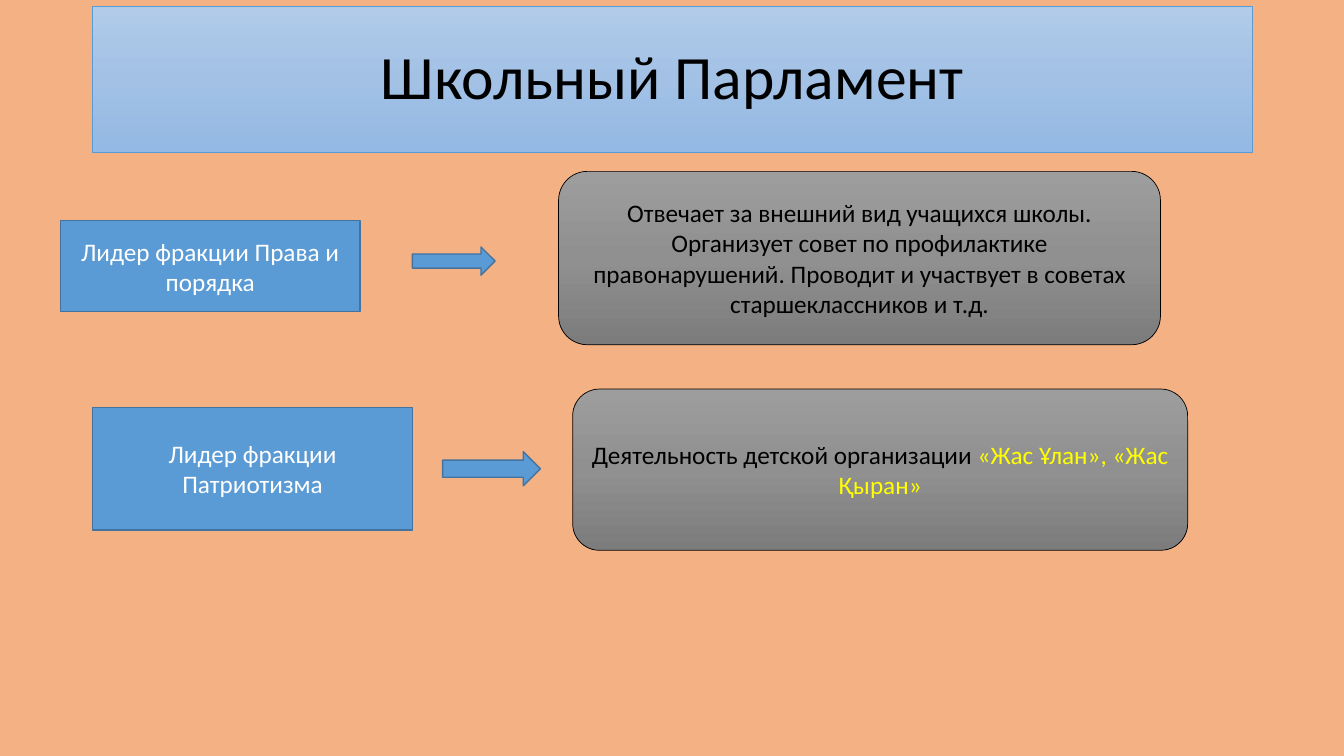
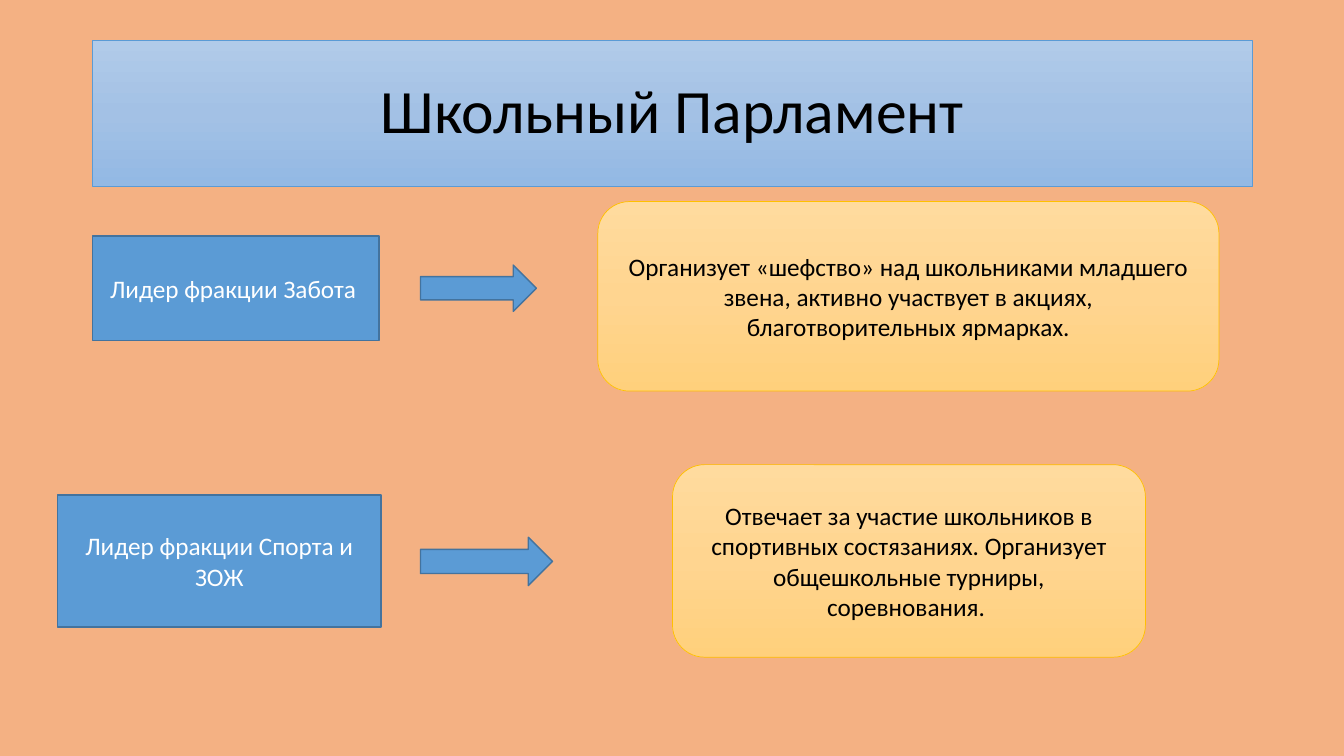
from copy import deepcopy
from pptx import Presentation
from pptx import util as u
from pptx.dml.color import RGBColor
from pptx.enum import shapes, text

HUES = {
    "page": "F4B183", "blue": "5B9BD5", "edge": "43739E",
    "black": "000000", "white": "FFFFFF", "yellow": "FFFF00", "gold": "FFC000",
}
FADES = {
    "sky": ("B1CBE9", "A3C1E5", "93B9E4"),
    "gray": ("9D9D9D", "909090", "7C7C7C"),
    "sand": ("FFDB9E", "FFD590", "FFD07C"),
}
FONT = "Calibri"
TITLE = "Школьный Парламент"
KIND = shapes.MSO_SHAPE

SLIDES = [
    {"top": 0.06, "fade": "gray", "edge": "black", "rows": [
        {"lead": ("Лидер фракции Права и порядка", (0.6, 2.19, 2.97, 0.9)),
         "arrow": (4.09, 2.45, 0.82, 0.28),
         "duty": ([("Отвечает за внешний вид учащихся школы. Организует совет по "
                    "профилактике правонарушений. Проводит и участвует в советах "
                    "старшеклассников и т.д.", "black")], (5.54, 1.7, 5.97, 1.72))},
        {"lead": ("Лидер фракции Патриотизма", (0.92, 4.04, 3.17, 1.22)),
         "arrow": (4.39, 4.48, 0.97, 0.34),
         "duty": ([("Деятельность детской организации ", "black"),
                   ("«Жас Ұлан», «Жас Қыран»", "yellow")], (5.68, 3.86, 6.1, 1.6))},
    ]},
    {"top": 0.4, "fade": "sand", "edge": "gold", "rows": [
        {"lead": ("Лидер фракции Забота ", (0.92, 2.34, 2.84, 1.04)),
         "arrow": (4.17, 2.63, 1.15, 0.46),
         "duty": ([("Организует «шефство» над школьниками младшего звена, активно "
                    "участвует в акциях, благотворительных ярмарках.", "black")],
                  (5.93, 2, 6.16, 1.88))},
        {"lead": ("Лидер фракции Спорта и ЗОЖ", (0.57, 4.91, 3.21, 1.31)),
         "arrow": (4.17, 5.33, 1.31, 0.48),
         "duty": ([("Отвечает за участие школьников в спортивных состязаниях. "
                    "Организует общешкольные турниры, соревнования. ", "black")],
                  (6.67, 4.61, 4.69, 1.91))},
    ]},
]


def place(shape, box):
    shape.left, shape.top, shape.width, shape.height = map(u.Inches, box)


def paint(fill, hue):
    fill.solid()
    fill.fore_color.rgb = RGBColor.from_string(HUES[hue])


def fade(shape, name):
    fill = shape.fill
    fill.gradient()
    fill.gradient_angle = 270
    first = shape._element.spPr.gradFill.gsLst[0]
    first.addnext(deepcopy(first))
    for i, (stop, hue) in enumerate(zip(fill.gradient_stops, FADES[name])):
        stop.position = i / 2
        stop.color.rgb = RGBColor.from_string(hue)


def rim(shape, hue, width):
    paint(shape.line.fill, hue)
    shape.line.width = u.Pt(width)


def write(shape, parts, size):
    frame = shape.text_frame
    frame.word_wrap = True
    frame.vertical_anchor = text.MSO_ANCHOR.MIDDLE
    para = frame.paragraphs[0]
    para.alignment = text.PP_ALIGN.CENTER
    for words, hue in parts:
        run = para.add_run()
        run.text = words
        run.font.name = FONT
        run.font.size = u.Pt(size)
        run.font.color.rgb = RGBColor.from_string(HUES[hue])
    return para


def add(slide, kind, box):
    shape = slide.shapes.add_shape(kind, *map(u.Inches, box))
    shape.shadow.inherit = False
    return shape


def block(slide, kind, box):
    shape = add(slide, kind, box)
    paint(shape.fill, "blue")
    rim(shape, "edge", 1)
    return shape


def head(slide, top):
    title = slide.shapes.title
    place(title, (0.92, top, 11.5, 1.45))
    fade(title, "sky")
    rim(title, "blue", 0.5)
    write(title, [(TITLE, "black")], 44).line_spacing = 0.9


def build(deck, data):
    slide = deck.slides.add_slide(deck.slide_layouts[5])
    head(slide, data["top"])
    for row in data["rows"]:
        name, box = row["lead"]
        write(block(slide, KIND.RECTANGLE, box), [(name, "white")], 18)
        block(slide, KIND.RIGHT_ARROW, row["arrow"])
        parts, box = row["duty"]
        card = add(slide, KIND.ROUNDED_RECTANGLE, box)
        fade(card, data["fade"])
        rim(card, data["edge"], 0.5)
        write(card, parts, 18)


def main():
    deck = Presentation()
    deck.slide_width, deck.slide_height = u.Inches(13.33), u.Inches(7.5)
    paint(deck.slide_master.background.fill, "page")
    for data in SLIDES:
        build(deck, data)
    deck.save("out.pptx")


if __name__ == "__main__":
    main()
